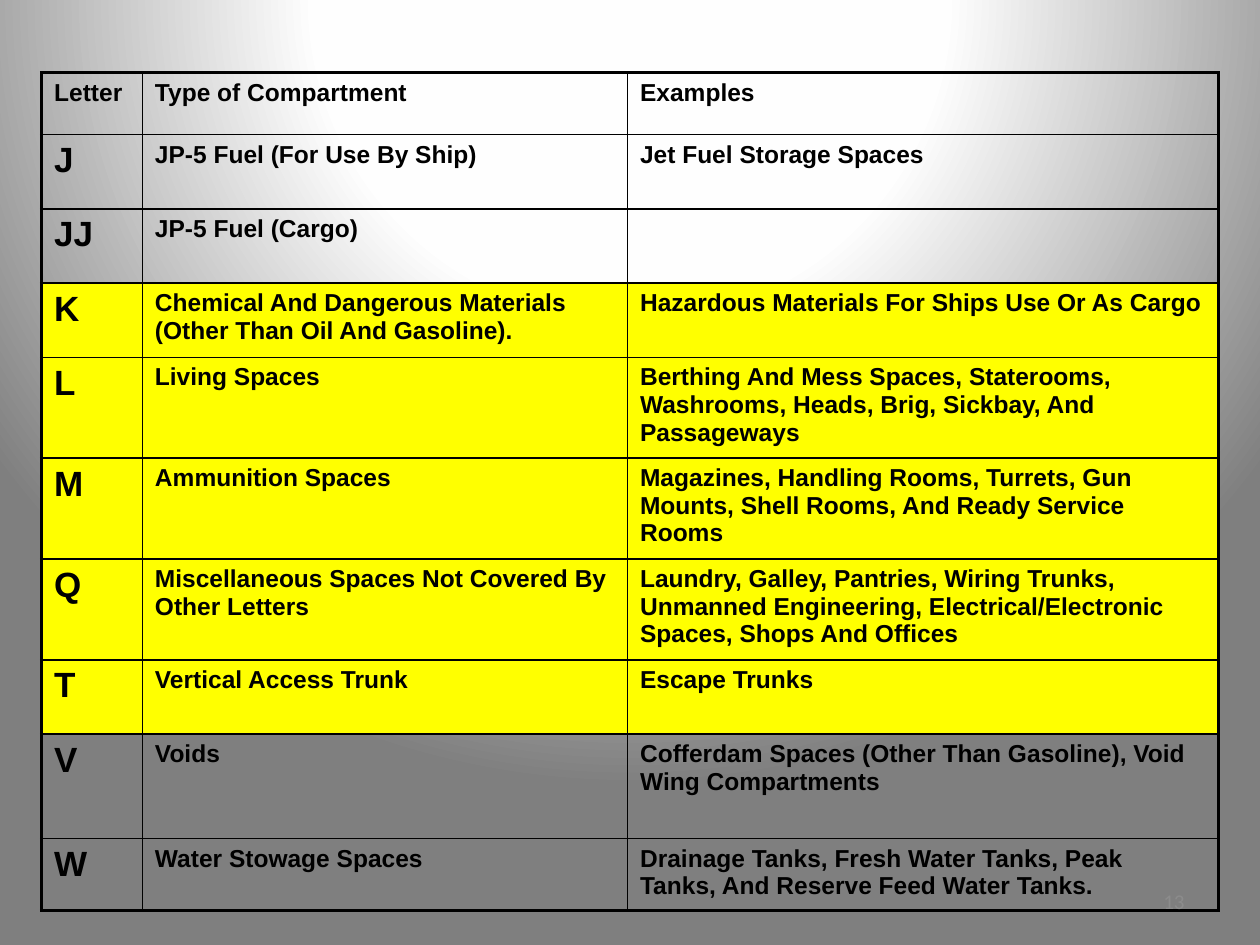
import lxml.etree
import pptx
import pptx.dml.color
import pptx.enum.text
import pptx.oxml
import pptx.oxml.ns
import pptx.util

COLUMNS = [0.8, 3.85, 4.69]
ROWS = [
    (0.49, "Letter", "Type of Compartment", "Examples"),
    (0.59, "J", "JP-5 Fuel (For Use By Ship)", "Jet Fuel Storage Spaces"),
    (0.59, "JJ", "JP-5 Fuel (Cargo)", ""),
    (0.59, "K", "Chemical And Dangerous Materials (Other Than Oil And Gasoline).",
     "Hazardous Materials For Ships Use Or As Cargo"),
    (0.8, "L", "Living Spaces",
     "Berthing And Mess Spaces, Staterooms, Washrooms, Heads, Brig, Sickbay, And Passageways"),
    (0.8, "M", "Ammunition Spaces",
     "Magazines, Handling Rooms, Turrets, Gun Mounts, Shell Rooms, And Ready Service Rooms"),
    (0.8, "Q", "Miscellaneous Spaces Not Covered By Other Letters",
     "Laundry, Galley, Pantries, Wiring Trunks, Unmanned Engineering, "
     "Electrical/Electronic Spaces, Shops And Offices"),
    (0.59, "T", "Vertical Access Trunk", "Escape Trunks"),
    (0.83, "V", "Voids", "Cofferdam Spaces (Other Than Gasoline), Void Wing Compartments"),
    (0.57, "W", "Water Stowage Spaces",
     "Drainage Tanks, Fresh Water Tanks, Peak Tanks, And Reserve Feed Water Tanks."),
]
HIGHLIGHTED = {"K", "L", "M", "Q", "T"}


def color(value):
    return pptx.dml.color.RGBColor.from_string(value)


def add_child(parent, tag, **attributes):
    child = lxml.etree.SubElement(parent, pptx.oxml.ns.qn(tag))
    for name, value in attributes.items():
        child.set(name, str(value))
    return child


def write(para, text, font="Arial", size=14, ink="000000", bold=False, align=None, before=0):
    span = para.add_run()
    span.text = text
    span.font.name = font
    span.font.size = pptx.util.Pt(size)
    span.font.bold = bold
    span.font.color.rgb = color(ink)
    if align is not None:
        para.alignment = align
    if before:
        para.space_before = pptx.util.Pt(0)
        spacing = para._p.pPr.find(pptx.oxml.ns.qn("a:spcBef"))
        spacing.remove(spacing[0])
        add_child(spacing, "a:spcPct", val=before * 1000)


class Sheet:
    line = "000000"
    outer = 2.25
    inner = 1
    highlight = "FFFF00"

    def __init__(self, deck):
        self.page = deck.slides.add_slide(deck.slide_layouts[6])
        self.width, self.height = deck.slide_width, deck.slide_height

    def place(self, left, top, width, height):
        return (round(left * self.width), round(top * self.height),
                round(width * self.width), round(height * self.height))

    def background(self, stops, center):
        self.page.background.fill.solid()
        holder = self.page.element.xpath(".//p:bgPr")[0]
        holder.remove(holder[0])
        gradient = pptx.oxml.parse_xml(
            f'<a:gradFill {pptx.oxml.ns.nsdecls("a")} rotWithShape="1"/>')
        holder.insert(0, gradient)
        stop_list = add_child(gradient, "a:gsLst")
        for position, value in stops:
            stop = add_child(stop_list, "a:gs", pos=position * 1000)
            add_child(stop, "a:srgbClr", val=value)
        shade = add_child(gradient, "a:path", path="circle")
        add_child(shade, "a:fillToRect",
                  **{side: share * 1000 for side, share in zip("ltrb", center)})

    def borders(self, cell, outer_sides):
        properties = cell._tc.get_or_add_tcPr()
        for side in "LRTB":
            points = self.outer if side in outer_sides else self.inner
            edge = add_child(properties, f"a:ln{side}", w=pptx.util.Pt(points))
            fill = add_child(edge, "a:solidFill")
            add_child(fill, "a:srgbClr", val=self.line)

    def table(self, left, top, columns, rows, highlighted):
        width = sum(columns) / self.width.inches
        height = sum(row[0] for row in rows) / self.height.inches
        frame = self.page.shapes.add_table(
            len(rows), len(columns), *self.place(left, top, width, height))
        table = frame.table
        table.first_row = table.horz_banding = False
        for column, size in zip(table.columns, columns):
            column.width = pptx.util.Inches(size)
        last_row, last_column = len(rows) - 1, len(columns) - 1
        for r, (size, *texts) in enumerate(rows):
            table.rows[r].height = pptx.util.Inches(size)
            for c, text in enumerate(texts):
                cell = table.cell(r, c)
                edges = {"L": c == 0, "R": c == last_column, "T": r == 0, "B": r == last_row}
                self.borders(cell, {side for side, outside in edges.items() if outside})
                if texts[0] in highlighted:
                    cell.fill.solid()
                    cell.fill.fore_color.rgb = color(self.highlight)
                else:
                    cell.fill.background()
                if text:
                    write(cell.text_frame.paragraphs[0], text, bold=True, before=20,
                          size=20 if r and c == 0 else 14)

    def text(self, text, left, top, width, height, **style):
        box = self.page.shapes.add_textbox(*self.place(left, top, width, height))
        box.text_frame.word_wrap = True
        box.text_frame.vertical_anchor = pptx.enum.text.MSO_ANCHOR.MIDDLE
        write(box.text_frame.paragraphs[0], text, **style)


def main():
    deck = pptx.Presentation()
    deck.slide_width = pptx.util.Inches(10)
    deck.slide_height = pptx.util.Inches(7.5)
    sheet = Sheet(deck)
    sheet.background([(0, "FFFFFF"), (40, "FEFEFE"), (100, "7F7F7F")], (50, -80, 50, 180))
    sheet.table(0.033, 0.077, COLUMNS, ROWS, HIGHLIGHTED)
    sheet.text("13", 0.717, 0.927, 0.233, 0.053, font="Calibri", size=12, ink="8C8C8C",
               align=pptx.enum.text.PP_ALIGN.RIGHT)
    deck.save("out.pptx")


if __name__ == "__main__":
    main()
